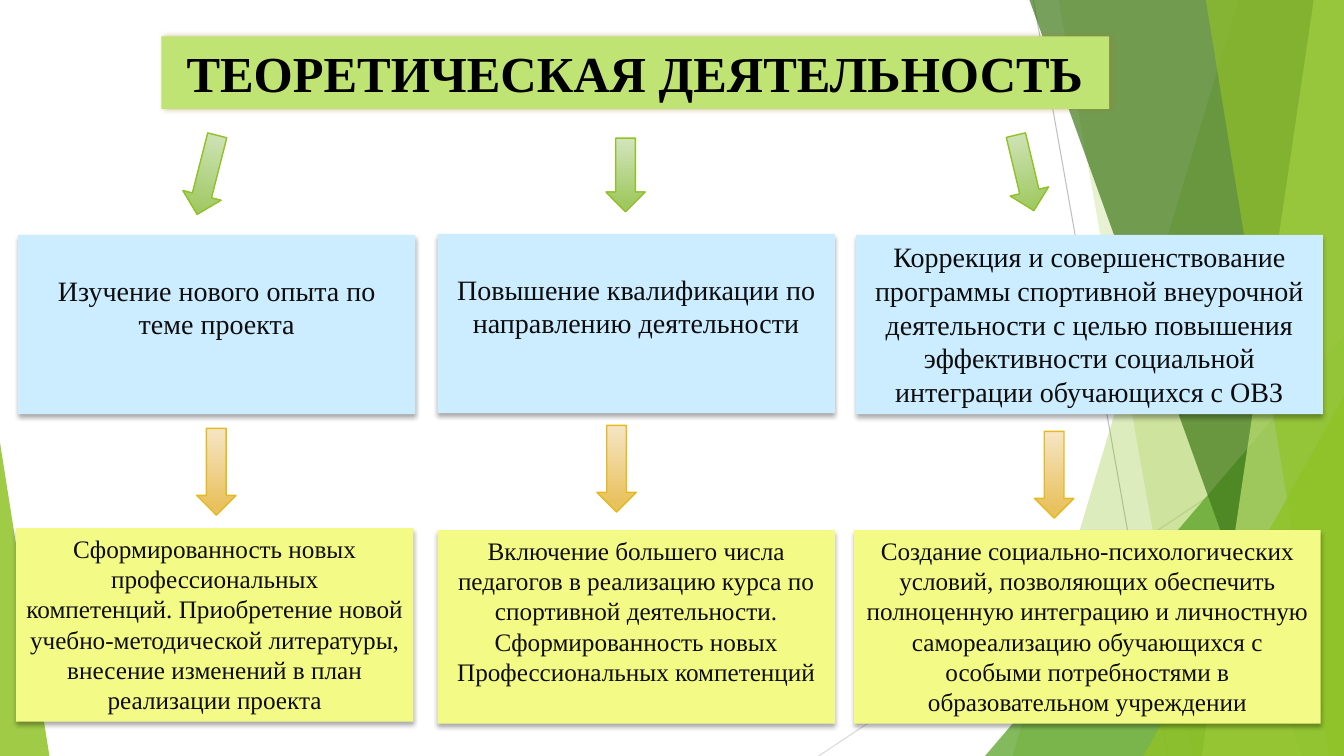
from lxml import etree
from pptx import Presentation
from pptx.dml.color import RGBColor
from pptx.enum.shapes import MSO_CONNECTOR, MSO_SHAPE
from pptx.enum.text import MSO_ANCHOR, MSO_AUTO_SIZE, PP_ALIGN
from pptx.oxml.ns import qn
from pptx.util import Inches, Pt

LINE = MSO_CONNECTOR.STRAIGHT
PEAK = MSO_SHAPE.ISOSCELES_TRIANGLE
ARROW = MSO_SHAPE.DOWN_ARROW
MIDDLE = MSO_ANCHOR.MIDDLE
CENTER = PP_ALIGN.CENTER
FIXED = MSO_AUTO_SIZE.NONE
FONT = "Times New Roman"
W, H = 13.33, 7.5


def paint(fill, hue, alpha=100):
    fill.solid()
    fill.fore_color.rgb = RGBColor.from_string(hue)
    if alpha < 100:
        tone = fill._xPr.find(qn("a:solidFill"))[0]
        etree.SubElement(tone, qn("a:alpha")).set("val", str(alpha * 1000))


def shade(shape, hue, alpha, blur, dist, angle):
    shape.shadow.inherit = False
    effects = shape._element.spPr.find(qn("a:effectLst"))
    outer = etree.SubElement(effects, qn("a:outerShdw"), blurRad=str(Pt(blur)),
                             dist=str(Pt(dist)), dir=str(angle * 60000),
                             algn="ctr", rotWithShape="0")
    tone = etree.SubElement(outer, qn("a:srgbClr"), val=hue)
    etree.SubElement(tone, qn("a:alpha"), val=str(alpha * 1000))


deck = Presentation()
deck.slide_width, deck.slide_height = Inches(W), Inches(H)
slide = deck.slides.add_slide(deck.slide_layouts[5])
shapes = slide.shapes

for hue, *ends in [("BFBFBF", 10.25, 0, 11.58, H), ("D9D9D9", W, 4.03, 8.12, H)]:
    line = shapes.add_connector(LINE, *map(Inches, ends))
    paint(line.line.fill, hue)
    line.line.width = Pt(0.75)
    etree.SubElement(line._element.spPr, qn("a:effectLst"))

facets = [
    ("90C226", 30, 12.28, 10.04),
    ("90C226", 20, 10.5, 11.83),
    ("54A021", 72, 9.77, 3.33, 3.56, 1),
    ("3F7819", 70, 10.21, 12.91),
    ("C0E474", 70, 13.03, 11.92),
    ("90C226", 65, 11.96, 13.18),
    ("90C226", 80, 11.34, 3.93, 1.99, 1),
    ("90C226", 85, 0, 4.39, 0.49, 0),
]
for hue, alpha, *spot in facets:
    if len(spot) == 2:
        upper, lower = map(Inches, spot)
        path = shapes.build_freeform(upper, 0)
        path.add_line_segments([(Inches(W), 0), (Inches(W), Inches(H)), (lower, Inches(H))])
        facet = path.convert_to_shape()
    else:
        left, top, width, tip = spot
        facet = shapes.add_shape(PEAK, *map(Inches, (left, top, width, H - top)))
        facet.adjustments[0] = tip
    paint(facet.fill, hue, alpha)
    facet.line.fill.background()
    facet.shadow.inherit = False

title = shapes.title
shapes._spTree.append(title._element)
title.left, title.top, title.width, title.height = map(Inches, (1.6, 0.36, 9.4, 0.72))
title.text = "ТЕОРЕТИЧЕСКАЯ ДЕЯТЕЛЬНОСТЬ"
paint(title.fill, "C0E474")
shade(title, "A08030", 50, 4, 1, 0)
frame = title.text_frame
frame.auto_size = FIXED
frame.vertical_anchor = MIDDLE
head = frame.paragraphs[0]
head.alignment = CENTER
head.font.name, head.font.size, head.font.bold = FONT, Pt(36), True
paint(head.font.fill, "000000")

rows = [
    ("CCECFF", 20, 1.78, [
        (0.18, 2.33, 3.94, 0.38, "Изучение нового опыта по теме проекта"),
        (4.34, 2.32, 3.94, 0.38, "Повышение квалификации по направлению деятельности"),
        (8.49, 2.33, 4.63, 0.05, "Коррекция и совершенствование программы спортивной внеурочной "
         "деятельности с целью повышения эффективности социальной интеграции обучающихся с ОВЗ"),
    ]),
    ("F4FA86", 18, 1.92, [
        (0.16, 5.24, 3.94, 0.05, "Сформированность новых\nпрофессиональных\n"
         "компетенций. Приобретение новой\nучебно-методической литературы,\n"
         "внесение изменений в план реализации проекта"),
        (4.34, 5.26, 3.94, 0.05, "Включение большего числа педагогов в реализацию курса по\n"
         "спортивной деятельности. Сформированность новых\nПрофессиональных компетенций"),
        (8.47, 5.26, 4.63, 0.05, "Создание социально-психологических условий, позволяющих "
         "обеспечить полноценную интеграцию и личностную самореализацию обучающихся с "
         "особыми потребностями в образовательном учреждении"),
    ]),
]
for hue, size, height, cards in rows:
    for left, top, width, inset, text in cards:
        card = shapes.add_textbox(*map(Inches, (left, top, width, height)))
        paint(card.fill, hue)
        shade(card, "000000", 32, 3.5, 2.2, 90)
        frame = card.text_frame
        frame.word_wrap = True
        frame.margin_top = Inches(inset)
        frame.text = text
        for para in frame.paragraphs:
            para.alignment = CENTER
            para.font.name, para.font.size = FONT, Pt(size)
            paint(para.font.fill, "0D0D0D")

green = ("D3E5BE", "A0C962", "90C226")
gold = ("F5E5C5", "E9C260", "E6B91E")
arrows = [
    (green, 1.86, 1.33, 0.81, 14.3),
    (gold, 1.95, 4.25, 0.86, 0),
    (gold, 5.92, 4.22, 0.86, 0),
    (gold, 10.26, 4.28, 0.86, 0),
    (green, 6.01, 1.37, 0.73, 0),
    (green, 9.97, 1.33, 0.77, 346.6),
]
for (light, dark, edge), left, top, height, turn in arrows:
    arrow = shapes.add_shape(ARROW, *map(Inches, (left, top, 0.39, height)))
    arrow.rotation = turn
    arrow.fill.gradient()
    arrow.fill.gradient_angle = 270
    for stop, hue, place in zip(arrow.fill.gradient_stops, (light, dark), (0, 0.88)):
        stop.color.rgb = RGBColor.from_string(hue)
        stop.position = place
    paint(arrow.line.fill, edge)
    arrow.line.width = Pt(1)
    arrow.shadow.inherit = False

deck.save("out.pptx")
